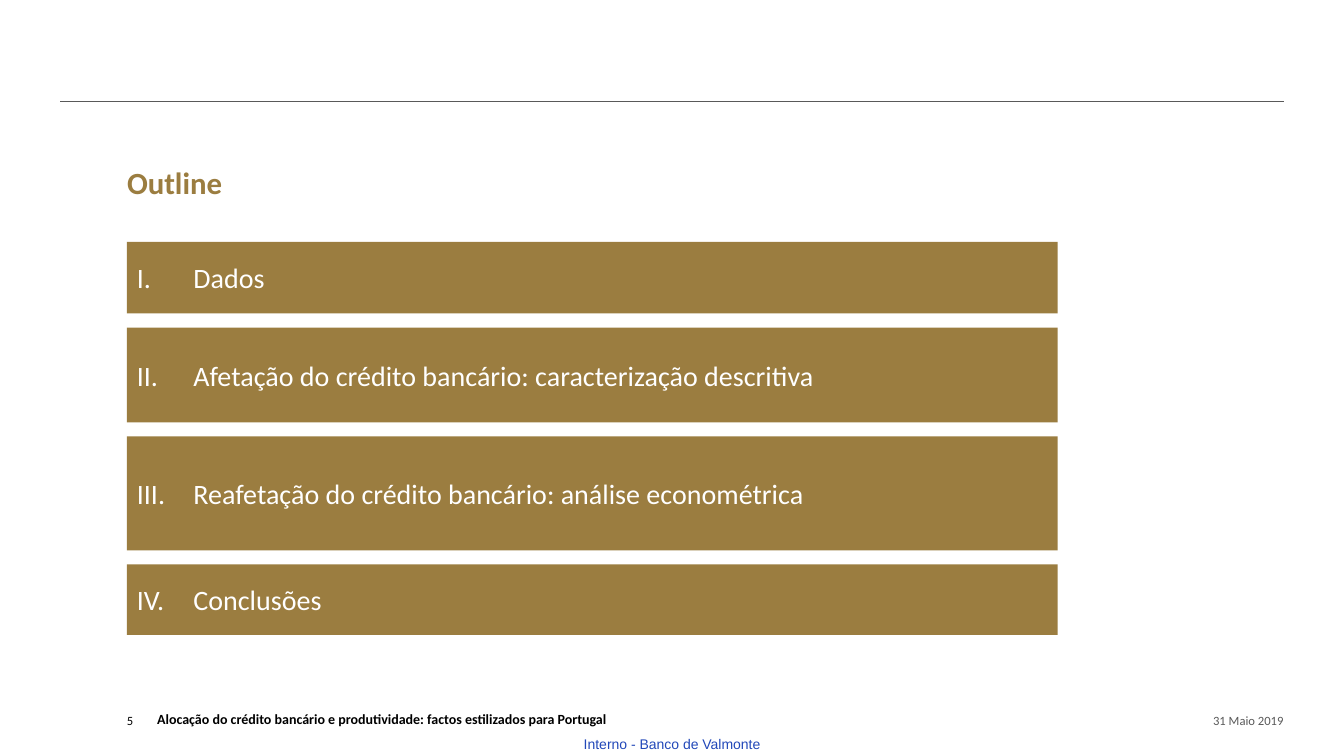
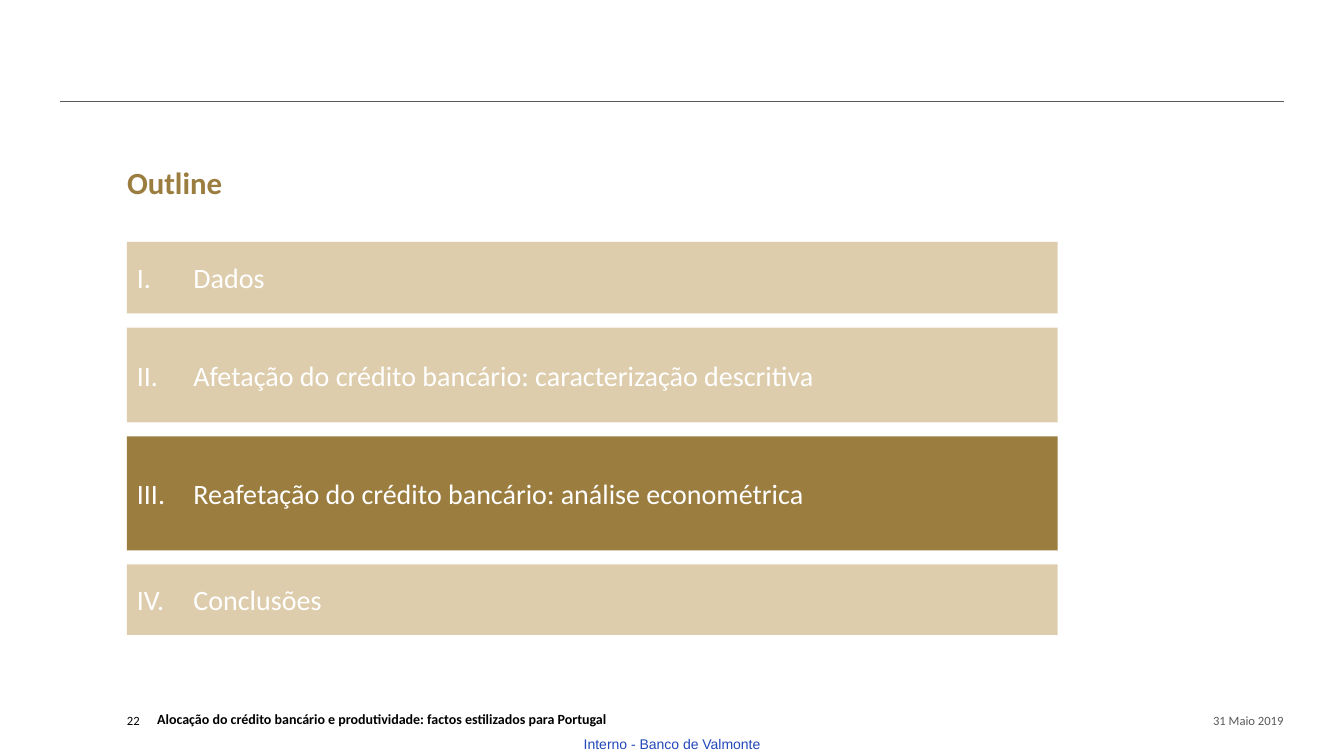
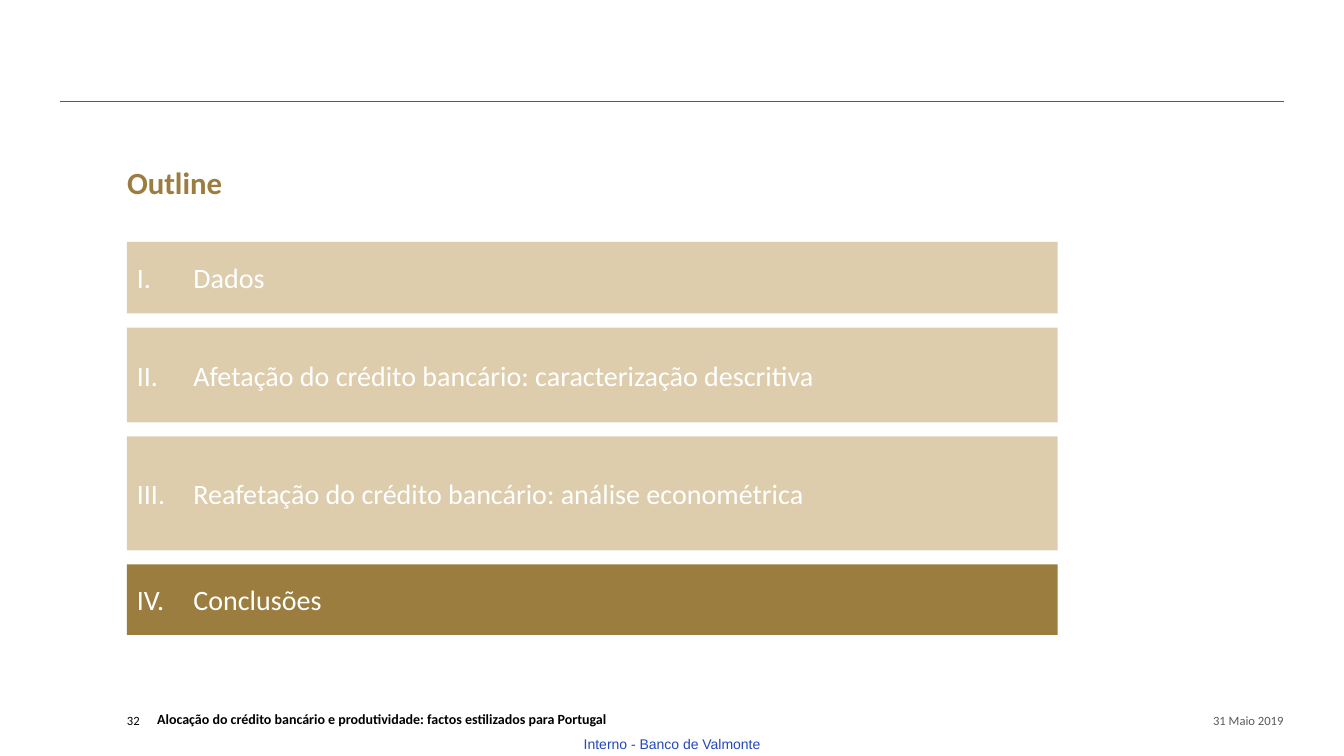
from pptx import Presentation
from pptx.dml.color import RGBColor as Rgb
from pptx.enum.shapes import MSO_CONNECTOR as Conn, MSO_SHAPE as Geo
from pptx.enum.text import MSO_ANCHOR as Anc, MSO_AUTO_SIZE as Fit, PP_ALIGN as Al
from pptx.oxml.ns import qn
from pptx.util import Inches, Pt
from lxml.etree import SubElement as Sub

# Content
TITLE = "Outline"
PARTS = [  # text, bar height
    ("Dados", 0.71),
    ("Afetação do crédito bancário: caracterização descritiva", 0.94),
    ("Reafetação do crédito bancário: análise econométrica", 1.13),
    ("Conclusões", 0.7),
]
SLIDES = [  # page number, active parts
    ("5", {0, 1, 2, 3}),
    ("22", {2}),
    ("32", {3}),
]
TALK = "Alocação do crédito bancário e produtividade: factos estilizados para Portugal"
DATE = "31 Maio 2019"
LABEL = "Interno - Banco de Valmonte"

# Shared look
HEX = dict(gold="9B7D40", sand="DDCDAD", white="FFFFFF", black="000000",
           grey="595959", blue="2248B9")
COL = {key: Rgb.from_string(val) for key, val in HEX.items()}
STYLES = {
    "title": dict(size=Pt(22), bold=True, color="gold"),
    "bar": dict(size=Pt(20), color="white"),
    "page": dict(size=Pt(9), color="black"),
    "talk": dict(size=Pt(10), bold=True, color="black"),
    "date": dict(size=Pt(9), color="grey"),
    "label": dict(size=Pt(10), name="Arial", color="blue"),
}
LEFT, TOP, WIDE, GAP, INDENT = 1.26, 2.4, 9.23, 0.14, 0.56
FOOT = 6.94, 0.28  # top, height


def put(shape, text, style, align=Al.LEFT, anchor=Anc.BOTTOM, pad=0):
    """Write one styled paragraph into a shape."""
    frame = shape.text_frame
    fmt = dict(word_wrap=True, auto_size=Fit.NONE, vertical_anchor=anchor)
    if pad is not None:
        fmt.update({f"margin_{side}": pad for side in ("left", "top", "right", "bottom")})
    for key, val in fmt.items():
        setattr(frame, key, val)
    para = frame.paragraphs[0]
    para.alignment = align
    run = para.add_run()
    run.text = text
    for key, val in {"name": "Calibri", **STYLES[style]}.items():
        if key == "color":
            run.font.color.rgb = COL[val]
        else:
            setattr(run.font, key, val)
    return para


def box(slide, left, top, width, height, *args, **opts):
    shape = slide.shapes.add_textbox(*map(Inches, (left, top, width, height)))
    put(shape, *args, **opts)
    return shape


def number(para, start):
    """Give a paragraph a roman number with a hanging indent."""
    props = para._p.get_or_add_pPr()
    props.set("marL", str(Inches(INDENT)))
    props.set("indent", str(-Inches(INDENT)))
    Sub(props, qn("a:buFont"), typeface="Calibri")
    Sub(props, qn("a:buAutoNum"), type="romanUcPeriod", startAt=str(start))


def dress(slide, layout):
    """Build the rule and label, then move them to the layout."""
    rule = slide.shapes.add_connector(
        Conn.STRAIGHT, *map(Inches, (0.6, 1.01, 12.73, 1.01)))
    rule.line.color.rgb = COL["grey"]
    rule.line.width = Pt(0.5)
    Sub(rule.element.spPr, qn("a:effectLst"))
    label = box(slide, 0, 7.3, 13.33, 0.17, LABEL, "label",
                align=Al.CENTER, anchor=Anc.TOP)
    for shape in (rule, label):
        layout.shapes.element.append(shape.element)


def bars(slide, active):
    top = TOP
    for idx, (text, high) in enumerate(PARTS):
        bar = slide.shapes.add_shape(
            Geo.RECTANGLE, *map(Inches, (LEFT, top, WIDE, high)))
        bar.shadow.inherit = False
        bar.fill.solid()
        bar.fill.fore_color.rgb = COL["gold" if idx in active else "sand"]
        bar.line.fill.background()
        para = put(bar, text, "bar", anchor=Anc.MIDDLE, pad=None)
        number(para, idx + 1)
        top += high + GAP


def main():
    prs = Presentation()
    prs.slide_width, prs.slide_height = Inches(13.33), Inches(7.5)
    layout = prs.slide_layouts.get_by_name("Title Only")
    head = layout.placeholders[0]
    spot = dict(left=LEFT, top=1.02, width=10.81, height=0.98)
    for key, val in spot.items():
        setattr(head, key, Inches(val))

    for idx, (page, active) in enumerate(SLIDES):
        slide = prs.slides.add_slide(layout)
        if idx == 0:
            dress(slide, layout)
        put(slide.shapes.title, TITLE, "title").line_spacing = 0.9
        bars(slide, active)
        # Footer
        top, high = FOOT
        box(slide, LEFT, top, 0.3, high, page, "page")
        box(slide, LEFT + 0.3, top, 9.84, high, TALK, "talk")
        box(slide, 11.55, top, 1.18, high, DATE, "date", align=Al.RIGHT)

    prs.save("out.pptx")


if __name__ == "__main__":
    main()
